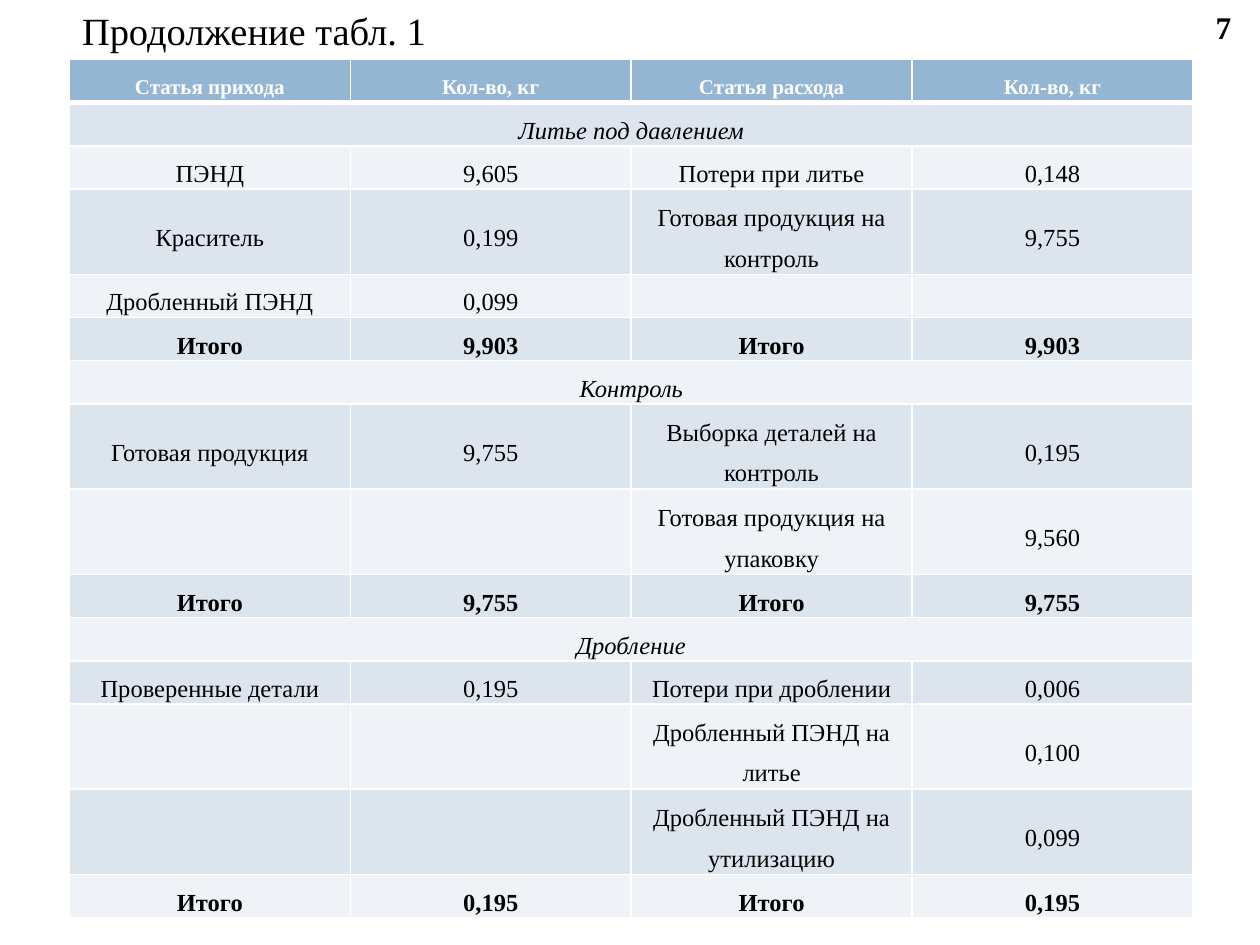
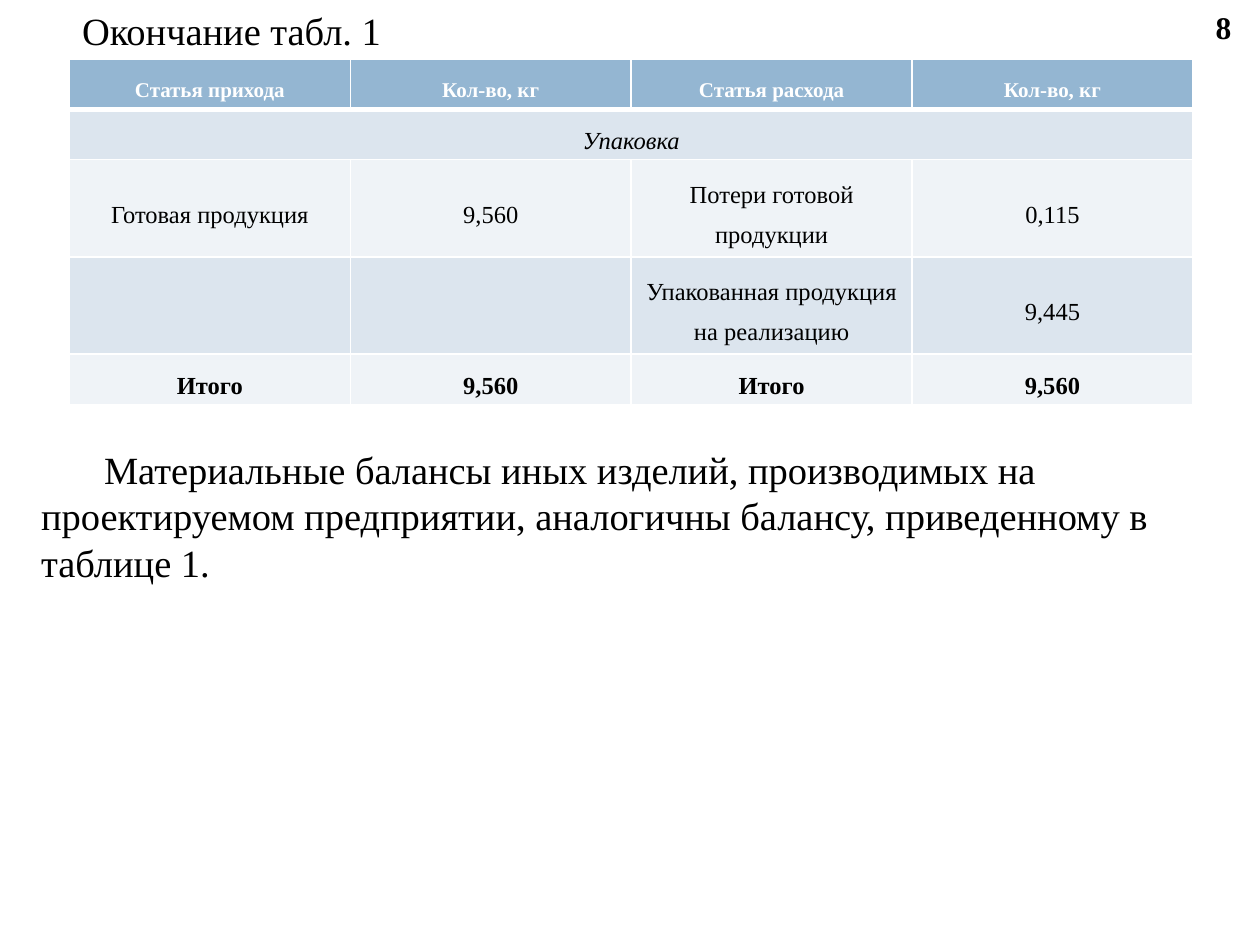
"""Build two slides that continue and end the material balance table."""
from dataclasses import dataclass

from lxml import etree
from pptx import Presentation
from pptx import util as u
from pptx.dml.color import RGBColor
from pptx.enum import text
from pptx.oxml import ns

HEADINGS = ("Статья прихода", "Кол-во, кг", "Статья расхода", "Кол-во, кг")
TOTAL = "Итого"

BALANCES = [
    {
        "number": "7",
        "title": "Продолжение табл. 1",
        "row_heights": (0.87, 1.72),
        "rows": [
            ("Литье под давлением",),
            ("ПЭНД", "9,605", "Потери при литье", "0,148"),
            ("Краситель", "0,199", "Готовая продукция на контроль", "9,755"),
            ("Дробленный ПЭНД", "0,099", "", ""),
            (TOTAL, "9,903", TOTAL, "9,903"),
            ("Контроль",),
            ("Готовая продукция", "9,755", "Выборка деталей на контроль", "0,195"),
            ("", "", "Готовая продукция на упаковку", "9,560"),
            (TOTAL, "9,755", TOTAL, "9,755"),
            ("Дробление",),
            ("Проверенные детали", "0,195", "Потери при дроблении", "0,006"),
            ("", "", "Дробленный ПЭНД на литье", "0,100"),
            ("", "", "Дробленный ПЭНД на утилизацию", "0,099"),
            (TOTAL, "0,195", TOTAL, "0,195"),
        ],
    },
    {
        "number": "8",
        "title": "Окончание табл. 1",
        "row_heights": (1.01, 1.96),
        "rows": [
            ("Упаковка",),
            ("Готовая продукция", "9,560", "Потери готовой продукции", "0,115"),
            ("", "", "Упакованная продукция на реализацию", "9,445"),
            (TOTAL, "9,560", TOTAL, "9,560"),
        ],
        "conclusion": "Материальные балансы иных изделий, производимых на проектируемом "
                      "предприятии, аналогичны балансу, приведенному в таблице 1.",
    },
]


@dataclass(frozen=True)
class Theme:
    """Colours, font and type sizes shared by the slides."""
    font: str = "Times New Roman"
    ink: str = "000000"
    white: str = "FFFFFF"
    header: str = "94B6D2"
    bands: tuple = ("DCE5EE", "EFF3F7")
    prose: int = 22
    number: int = 18
    entry: int = 14
    heading: int = 12


THEME = Theme()
LEFT, WIDTH, TITLE_HEIGHT = u.Cm(1.4), u.Cm(22.65), u.Cm(1.2)
LINE_CAPACITY = 22


def write(frame, wording, size, color=THEME.ink, bold=False, italic=False, align=text.PP_ALIGN.LEFT):
    """Put one formatted paragraph in a text frame and return it."""
    frame.text = wording
    paragraph = frame.paragraphs[0]
    paragraph.alignment = align
    for run in paragraph.runs:
        run.font.name, run.font.size = THEME.font, u.Pt(size)
        run.font.bold, run.font.italic = bold, italic
        run.font.color.rgb = RGBColor.from_string(color)
    return paragraph


def add_prose(slide, wording, left, top, width, height):
    """Add a wrapping text box and return its frame."""
    frame = slide.shapes.add_textbox(*map(u.Cm, (left, top, width, height))).text_frame
    frame.word_wrap = True
    return frame


def add_title(slide, wording):
    """Place and format the title placeholder."""
    title = slide.shapes.title
    title.left, title.top, title.width, title.height = LEFT, 0, WIDTH, TITLE_HEIGHT
    title.text_frame.auto_size = text.MSO_AUTO_SIZE.NONE
    title.text_frame.vertical_anchor = text.MSO_ANCHOR.MIDDLE
    write(title.text_frame, wording, THEME.prose)


def add_number(slide, number):
    """Add the slide number in the top right corner."""
    frame = add_prose(slide, number, 23.93, 0, 1.47, 1.07)
    frame.vertical_anchor = text.MSO_ANCHOR.MIDDLE
    write(frame, number, THEME.number, bold=True, align=text.PP_ALIGN.CENTER)


def add_conclusion(slide, wording):
    """Add the closing paragraph with its first line indented."""
    frame = add_prose(slide, wording, 0.58, 8.87, 24.2, 3.4)
    paragraph = write(frame, wording, THEME.prose)
    paragraph._p.get_or_add_pPr().set("indent", str(u.Cm(1.27)))


def style_cell(cell, fill, row):
    """Set margins, borders and fill of one cell."""
    cell.margin_left = cell.margin_right = u.Cm(0.18)
    cell.margin_top = cell.margin_bottom = 0
    cell.vertical_anchor = text.MSO_ANCHOR.MIDDLE
    widths = {"L": 1, "R": 1, "T": 3 if row == 1 else 1, "B": 3 if row == 0 else 1}
    for side, points in widths.items():
        border = etree.SubElement(cell._tc.get_or_add_tcPr(), ns.qn(f"a:ln{side}"), w=str(u.Pt(points)))
        paint = etree.SubElement(border, ns.qn("a:solidFill"))
        etree.SubElement(paint, ns.qn("a:srgbClr"), val=THEME.white)
    cell.fill.solid()
    cell.fill.fore_color.rgb = RGBColor.from_string(fill)


def add_balance(slide, rows, row_heights):
    """Add the balance table with headings, stage rows, entries and totals."""
    entries = [HEADINGS, *rows]
    single, double = map(u.Cm, row_heights)
    heights = [double if max(map(len, entry)) > LINE_CAPACITY else single for entry in entries]
    table = slide.shapes.add_table(
        len(entries), len(HEADINGS), LEFT, TITLE_HEIGHT, WIDTH, sum(heights)).table
    for row, (entry, height) in enumerate(zip(entries, heights)):
        table.rows[row].height = height
        is_heading, is_stage = row == 0, len(entry) == 1
        fill = THEME.header if is_heading else THEME.bands[(row - 1) % 2]
        for cell in table.rows[row].cells:
            style_cell(cell, fill, row)
        if is_stage:
            table.cell(row, 0).merge(table.cell(row, len(HEADINGS) - 1))
        for column, wording in enumerate(entry):
            if wording:
                paragraph = write(
                    table.cell(row, column).text_frame, wording,
                    THEME.heading if is_heading else THEME.entry,
                    THEME.white if is_heading else THEME.ink,
                    bold=is_heading or entry[0] == TOTAL, italic=is_stage,
                    align=text.PP_ALIGN.CENTER)
                paragraph.line_spacing = 1.5


def main():
    """Build and save the presentation."""
    deck = Presentation()
    deck.slide_width, deck.slide_height = u.Cm(25.4), u.Cm(19.05)
    for balance in BALANCES:
        slide = deck.slides.add_slide(deck.slide_layouts.get_by_name("Title Only"))
        add_title(slide, balance["title"])
        add_balance(slide, balance["rows"], balance["row_heights"])
        add_number(slide, balance["number"])
        if "conclusion" in balance:
            add_conclusion(slide, balance["conclusion"])
    deck.save("out.pptx")


if __name__ == "__main__":
    main()
